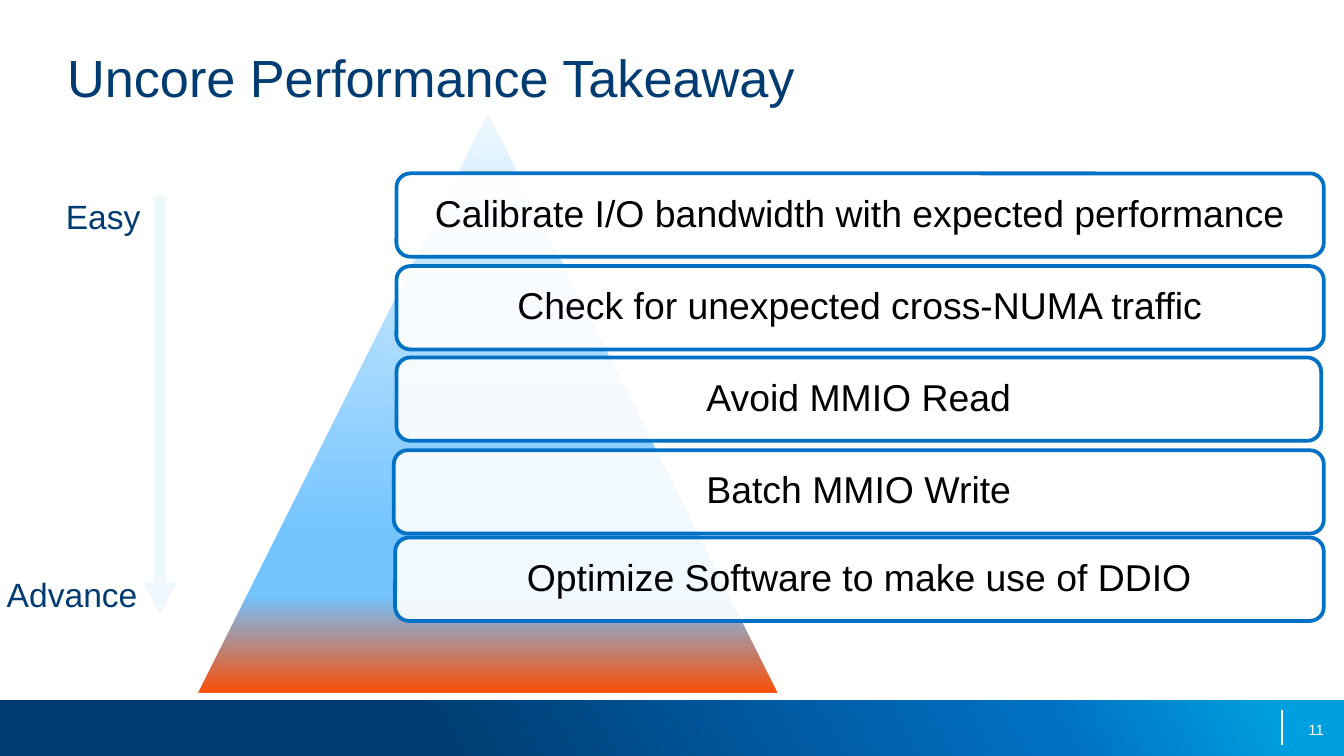
from lxml import etree
from pptx import Presentation
from pptx.dml.color import RGBColor
from pptx.enum.shapes import MSO_CONNECTOR, MSO_SHAPE
from pptx.enum.text import MSO_ANCHOR, PP_ALIGN
from pptx.oxml import parse_xml
from pptx.oxml.ns import nsdecls, qn
from pptx.util import Inches, Pt

NAVY, BLUE, WHITE, PALE = "003C71", "0071C5", "FFFFFF", "EFF8FF"


def color(value):
    return RGBColor.from_string(value)


def write(shape, text, size, hue, align=PP_ALIGN.LEFT, anchor=MSO_ANCHOR.TOP, inset=0, wrap=True):
    frame = shape.text_frame
    frame.word_wrap = wrap
    frame.vertical_anchor = anchor
    frame.margin_left = frame.margin_right = Inches(inset)
    frame.margin_top = frame.margin_bottom = Inches(inset)
    paragraph = frame.paragraphs[0]
    paragraph.text = text
    paragraph.alignment = align
    paragraph.font.name = "Arial"
    paragraph.font.size = Pt(size)
    paragraph.font.color.rgb = color(hue)
    return paragraph


prs = Presentation()
prs.slide_width = Inches(10)
prs.slide_height = Inches(10) * 9 // 16
slide = prs.slides.add_slide(prs.slide_layouts[6])
shapes = slide.shapes

# Footer band and pyramid, both with multi-stop gradients
gradients = [
    (MSO_SHAPE.RECTANGLE, (0, 5.21, 10, 0.42), 331,
     [(32, NAVY), (78, BLUE), (95, "009FDF")], None),
    (MSO_SHAPE.ISOSCELES_TRIANGLE, (1.45, 0.81, 4.36, 4.36), 90,
     [(0, PALE), (74, "72C3FF"), (83, "72C3FF"), (100, "FC4C02")], WHITE),
]
for kind, box, angle, stops, outline in gradients:
    shape = shapes.add_shape(kind, *map(Inches, box))
    shape.shadow.inherit = False
    stop_xml = "".join(
        f'<a:gs pos="{position * 1000}"><a:srgbClr val="{hue}"/></a:gs>' for position, hue in stops)
    shape._element.spPr.find(qn("a:prstGeom")).addnext(parse_xml(
        f'<a:gradFill {nsdecls("a")} rotWithShape="1"><a:gsLst>{stop_xml}</a:gsLst>'
        f'<a:lin ang="{angle * 60000}" scaled="0"/></a:gradFill>'))
    if outline:
        shape.line.color.rgb = color(outline)
        shape.line.width = Pt(2)
    else:
        shape.line.fill.background()

# Takeaways, from easy to advanced
takeaways = [
    ("Calibrate I/O bandwidth with expected performance", 2.95, 1.29, 6.9),
    ("Check for unexpected cross-NUMA traffic", 2.95, 1.98, 6.9),
    ("Avoid MMIO Read", 2.95, 2.66, 6.88),
    ("Batch MMIO Write", 2.93, 3.35, 6.92),
    ("Optimize Software to make use of DDIO", 2.94, 4, 6.91),
]
for text, left, top, width in takeaways:
    bar = shapes.add_shape(
        MSO_SHAPE.ROUNDED_RECTANGLE, Inches(left), Inches(top), Inches(width), Inches(0.62))
    bar.shadow.inherit = False
    bar.fill.solid()
    bar.fill.fore_color.rgb = color(WHITE)
    fill_color = bar._element.spPr.find(qn("a:solidFill")).find(qn("a:srgbClr"))
    etree.SubElement(fill_color, qn("a:alpha"), val="90000")
    bar.line.color.rgb = color(BLUE)
    bar.line.width = Pt(2)
    paragraph = write(bar, text, 20, "000000", PP_ALIGN.CENTER, MSO_ANCHOR.MIDDLE, 0.08)
    paragraph.line_spacing = 0.9

# Footer divider and difficulty arrow
lines = [
    ((9.54, 5.28, 9.54, 5.54), WHITE, 0.75, False),
    ((1.19, 1.46, 1.19, 4.58), PALE, 6, True),
]
for ends, hue, weight, has_arrowhead in lines:
    line = shapes.add_connector(MSO_CONNECTOR.STRAIGHT, *map(Inches, ends))
    line.line.color.rgb = color(hue)
    line.line.width = Pt(weight)
    if has_arrowhead:
        etree.SubElement(line.line._get_or_add_ln(), qn("a:tailEnd"), type="triangle")
    etree.SubElement(line._element.spPr, qn("a:effectLst"))

# Title, scale labels and page number
labels = [
    ("Uncore Performance Takeaway", (0.5, 0.34, 9, 0.95), 28, NAVY, {}),
    ("Easy", (0.49, 1.46, 0.56, 0.3), 18, NAVY, {"wrap": False}),
    ("Advance", (0.05, 4.27, 0.98, 0.3), 18, NAVY, {"wrap": False}),
    ("11", (7.52, 5.28, 2.33, 0.3), 8, WHITE,
     {"align": PP_ALIGN.RIGHT, "anchor": MSO_ANCHOR.MIDDLE}),
]
for text, box, size, hue, options in labels:
    write(shapes.add_textbox(*map(Inches, box)), text, size, hue, **options)

prs.save("out.pptx")
